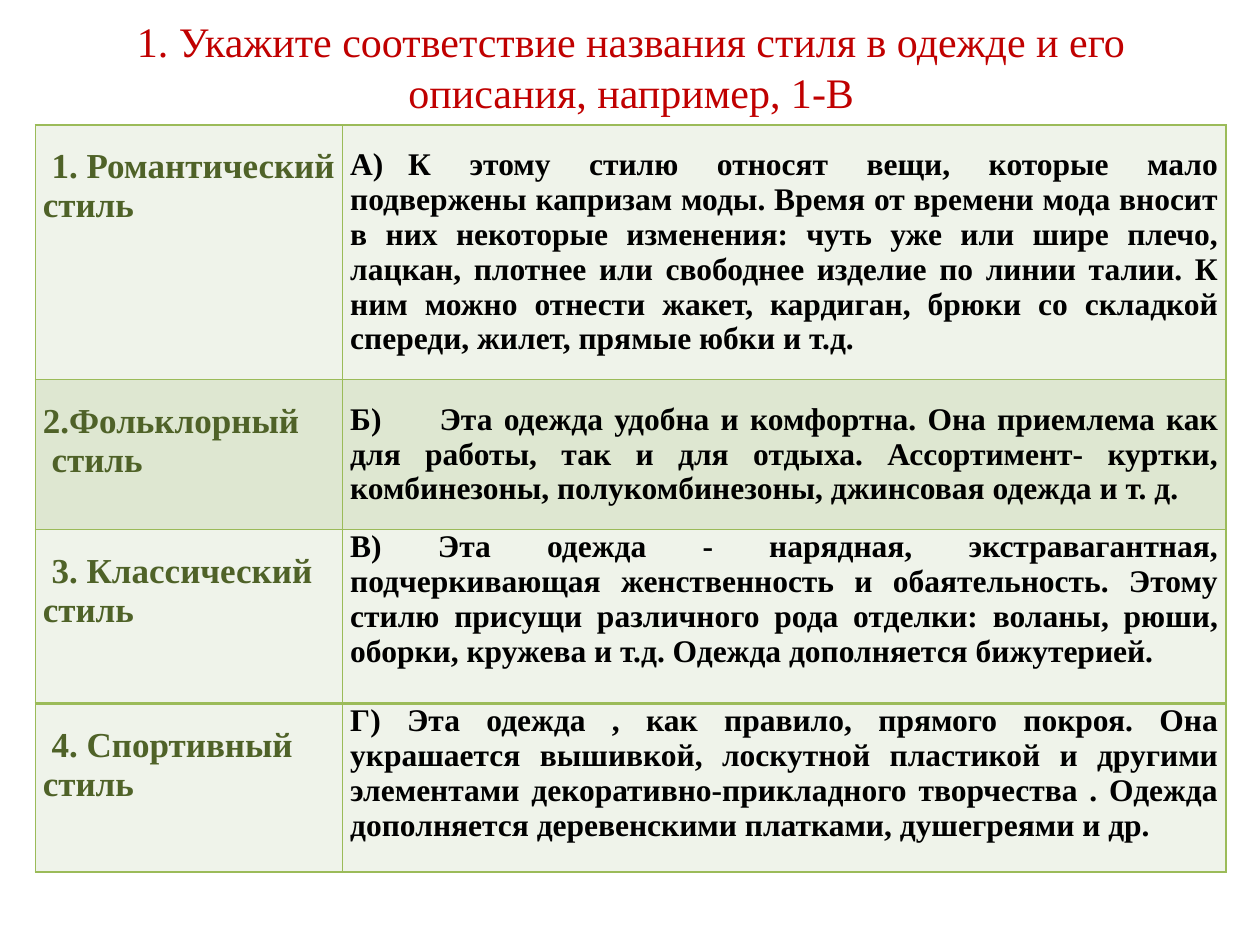
from lxml.etree import SubElement
from pptx import Presentation
from pptx.dml.color import RGBColor
from pptx.enum.text import MSO_ANCHOR, MSO_AUTO_SIZE, PP_ALIGN
from pptx.oxml.ns import qn
from pptx.util import Inches, Pt

FONT = "Times New Roman"
COLORS = {
    "title": "C00000",
    "style": "4F6228",
    "description": "000000",
    "border": "9BBB59",
    "light": "EFF3EA",
    "band": "DEE7D1",
}
TITLE = "1. Укажите соответствие названия стиля в одежде и его описания, например, 1-В"
COLUMN_WIDTHS = [2.44, 7.01]
PADDING = 0.18

# Row height, fill, style name, description, its tab stop and vertical padding
ROWS = [
    (2.02, "light", " 1. Романтический стиль",
     "А)\tК этому стилю относят вещи, которые мало подвержены капризам моды. "
     "Время от времени мода вносит в них некоторые изменения: чуть уже или шире "
     "плечо, лацкан, плотнее или свободнее изделие по линии талии. К ним можно "
     "отнести жакет, кардиган, брюки со складкой спереди, жилет, прямые юбки и т.д.",
     0.46, PADDING),
    (1.18, "band", "2.Фольклорный\n стиль",
     "Б)\tЭта одежда удобна и комфортна. Она приемлема как для работы, так и для "
     "отдыха. Ассортимент- куртки, комбинезоны, полукомбинезоны, джинсовая одежда "
     "и т. д.",
     0.71, PADDING),
    (1.38, "light", " 3. Классический стиль",
     "В) Эта одежда - нарядная, экстравагантная, подчеркивающая женственность и "
     "обаятельность. Этому стилю присущи различного рода отделки: воланы, рюши, "
     "оборки, кружева и т.д. Одежда дополняется бижутерией.",
     None, 0),
    (1.34, "light", " 4. Спортивный стиль",
     "Г) Эта одежда , как правило, прямого покроя. Она украшается вышивкой, "
     "лоскутной пластикой и другими элементами декоративно-прикладного творчества . "
     "Одежда дополняется деревенскими платками, душегреями и др.",
     None, 0),
]


def format_text(frame, size, color, align, bold=False):
    for para in frame.paragraphs:
        para.alignment = align
        for span in para.runs:
            span.font.name = FONT
            span.font.size = Pt(size)
            span.font.bold = bold
            span.font.color.rgb = RGBColor.from_string(COLORS[color])


def add_title(page):
    title = page.shapes.title
    title.left, title.top = Inches(0.51), Inches(-0.01)
    title.width, title.height = Inches(9), Inches(1.07)
    frame = title.text_frame
    frame.text = TITLE
    frame.auto_size = MSO_AUTO_SIZE.NONE
    frame.vertical_anchor = MSO_ANCHOR.MIDDLE
    format_text(frame, 24, "title", PP_ALIGN.CENTER)


def set_borders(cell, top, bottom):
    properties = cell._tc.get_or_add_tcPr()
    for side, width in (("L", 1), ("R", 1), ("T", top), ("B", bottom)):
        line = SubElement(properties, qn(f"a:ln{side}"), w=str(Pt(width)))
        fill = SubElement(line, qn("a:solidFill"))
        SubElement(fill, qn("a:srgbClr"), val=COLORS["border"])


def set_tab_stop(para, position):
    tabs = SubElement(para._p.get_or_add_pPr(), qn("a:tabLst"))
    SubElement(tabs, qn("a:tab"), pos=str(Inches(position)), algn="l")


def fill_cell(cell, text, fill, padding_top, padding_bottom):
    cell.text_frame.text = text
    cell.margin_left = cell.margin_right = Inches(0.06)
    cell.margin_top = Inches(padding_top)
    cell.margin_bottom = Inches(padding_bottom)
    cell.fill.solid()
    cell.fill.fore_color.rgb = RGBColor.from_string(COLORS[fill])


def add_style_table(page):
    height = sum(row[0] for row in ROWS)
    table = page.shapes.add_table(
        len(ROWS), len(COLUMN_WIDTHS), Inches(0.28), Inches(0.99),
        Inches(sum(COLUMN_WIDTHS)), Inches(height)).table
    table.first_row = False
    for column, width in zip(table.columns, COLUMN_WIDTHS):
        column.width = Inches(width)

    last = len(ROWS) - 1
    for index, (height, fill, style, description, tab, padding) in enumerate(ROWS):
        table.rows[index].height = Inches(height)
        style_cell, description_cell = table.cell(index, 0), table.cell(index, 1)
        # The line above the last row is heavier
        for cell in (style_cell, description_cell):
            set_borders(cell, 2 if index == last else 1, 2 if index == last - 1 else 1)

        fill_cell(style_cell, style, fill, PADDING, 0)
        format_text(style_cell.text_frame, 20, "style", PP_ALIGN.LEFT, bold=True)

        fill_cell(description_cell, description, fill, padding, padding)
        format_text(description_cell.text_frame, 18, "description",
                    PP_ALIGN.JUSTIFY, bold=True)
        if tab:
            set_tab_stop(description_cell.text_frame.paragraphs[0], tab)


def main():
    deck = Presentation()
    deck.slide_width, deck.slide_height = Inches(10), Inches(7.5)
    page = deck.slides.add_slide(deck.slide_layouts[5])
    add_title(page)
    add_style_table(page)
    deck.save("out.pptx")


if __name__ == "__main__":
    main()
